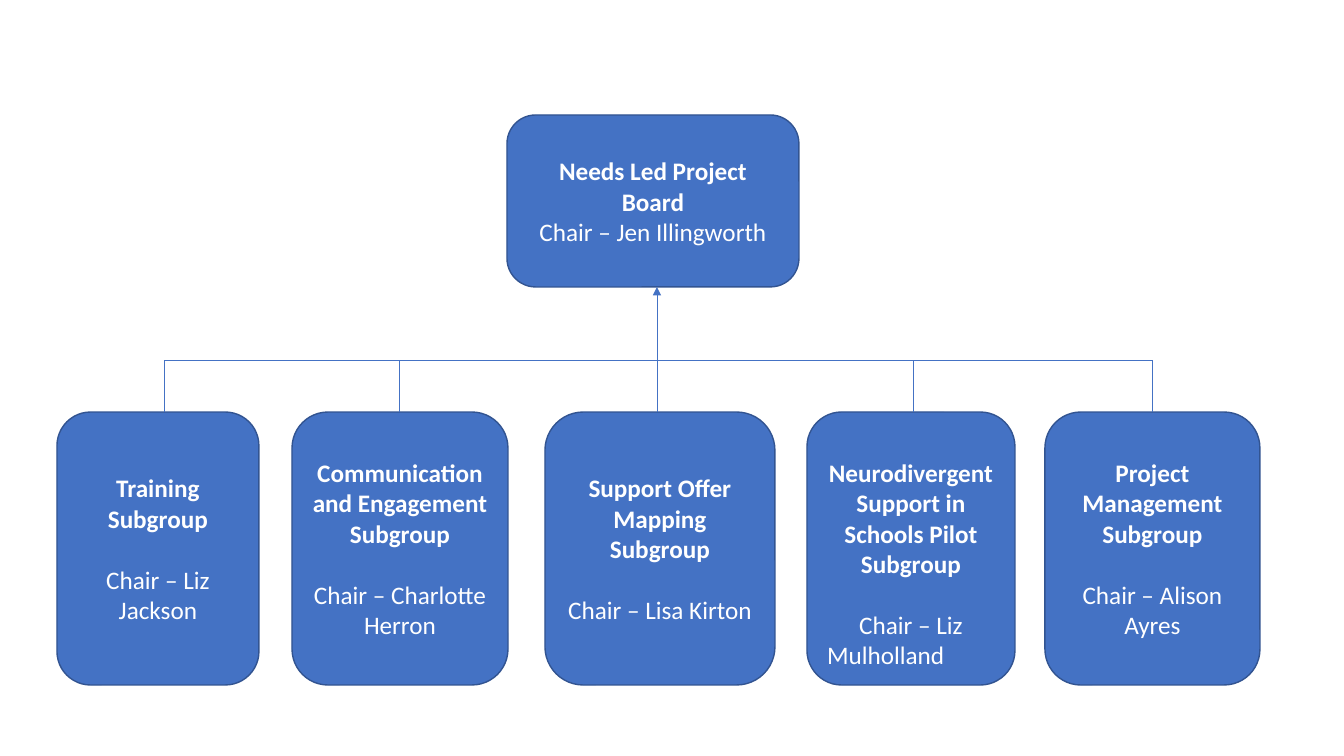
import pptx
import pptx.dml.color
import pptx.enum.shapes
import pptx.enum.text
import pptx.oxml
import pptx.oxml.ns
import pptx.util

PX = 914400 / 100.8
COLOURS = {"box": "4472C4", "outline": "325491", "text": "FFFFFF"}
ALIGN = pptx.enum.text.PP_ALIGN
BOX_TOP, BOX_HEIGHT = 412, 273
BUS_Y = 360
BOARD_BOTTOM = 287


def add_box(slide, left, top, width, height, name, chair_lines, gap, top_inset):
    shape = slide.shapes.add_shape(
        pptx.enum.shapes.MSO_SHAPE.ROUNDED_RECTANGLE,
        *(round(value * PX) for value in (left, top, width, height)))
    shape.shadow.inherit = False
    shape.fill.solid()
    shape.fill.fore_color.rgb = pptx.dml.color.RGBColor.from_string(COLOURS["box"])
    shape.line.color.rgb = pptx.dml.color.RGBColor.from_string(COLOURS["outline"])
    shape.line.width = pptx.util.Pt(1)
    text_frame = shape.text_frame
    text_frame.word_wrap = True
    text_frame.vertical_anchor = pptx.enum.text.MSO_ANCHOR.MIDDLE
    text_frame.margin_top = round(top_inset * PX)
    text_frame.text = "\n".join([name] + chair_lines)
    for index, paragraph in enumerate(text_frame.paragraphs):
        # A chair's name carried to its own line sits at the left
        paragraph.alignment = ALIGN.LEFT if index == 2 else ALIGN.CENTER
        if index == 1:
            paragraph.space_before = pptx.util.Pt(gap)
        font = paragraph.runs[0].font
        font.name = "Calibri"
        font.size = pptx.util.Pt(18)
        font.bold = index == 0
        font.color.rgb = pptx.dml.color.RGBColor.from_string(COLOURS["text"])


def add_line(slide, start_x, start_y, end_x, end_y):
    connector = slide.shapes.add_connector(
        pptx.enum.shapes.MSO_CONNECTOR.STRAIGHT,
        *(round(value * PX) for value in (start_x, start_y, end_x, end_y)))
    connector.line.color.rgb = pptx.dml.color.RGBColor.from_string(COLOURS["box"])
    connector.line.width = pptx.util.Pt(0.5)
    pptx.oxml.ns.qn("a:effectLst")
    properties = connector._element.spPr
    properties.append(properties.makeelement(pptx.oxml.ns.qn("a:effectLst"), {}))
    return connector


presentation = pptx.Presentation()
presentation.slide_width = round(1344 * PX)
presentation.slide_height = round(756 * PX)
slide = presentation.slides.add_slide(presentation.slide_layouts[6])

# Project board
add_box(slide, 507, 115, 292, BOARD_BOTTOM - 115, "Needs Led Project Board",
        ["Chair – Jen Illingworth"], 0, 5)

# Subgroups: left, width, connector x, name, chair lines, top inset
subgroups = [
    (57, 202, 164, "Training Subgroup", ["Chair – Liz Jackson"], 5),
    (292, 216, 399, "Communication and Engagement Subgroup",
     ["Chair – Charlotte Herron"], 5),
    (545, 230, 657, "Support Offer Mapping Subgroup", ["Chair – Lisa Kirton"], 5),
    (807, 208, 913, "Neurodivergent Support in Schools Pilot Subgroup",
     ["Chair – Liz", "Mulholland"], 35),
    (1045, 215, 1152, "Project Management Subgroup", ["Chair – Alison Ayres"], 5),
]
for left, width, line_x, name, chair_lines, top_inset in subgroups:
    add_box(slide, left, BOX_TOP, width, BOX_HEIGHT, name, chair_lines, 22, top_inset)
    add_line(slide, line_x, BOX_TOP, line_x, BUS_Y)

# Shared line and arrow up to the board
add_line(slide, subgroups[0][2], BUS_Y, subgroups[-1][2], BUS_Y)
arrow = add_line(slide, subgroups[2][2], BUS_Y, subgroups[2][2], BOARD_BOTTOM)
outline = arrow.line._get_or_add_ln()
outline.append(outline.makeelement(pptx.oxml.ns.qn("a:tailEnd"), {"type": "triangle"}))

presentation.save("out.pptx")
